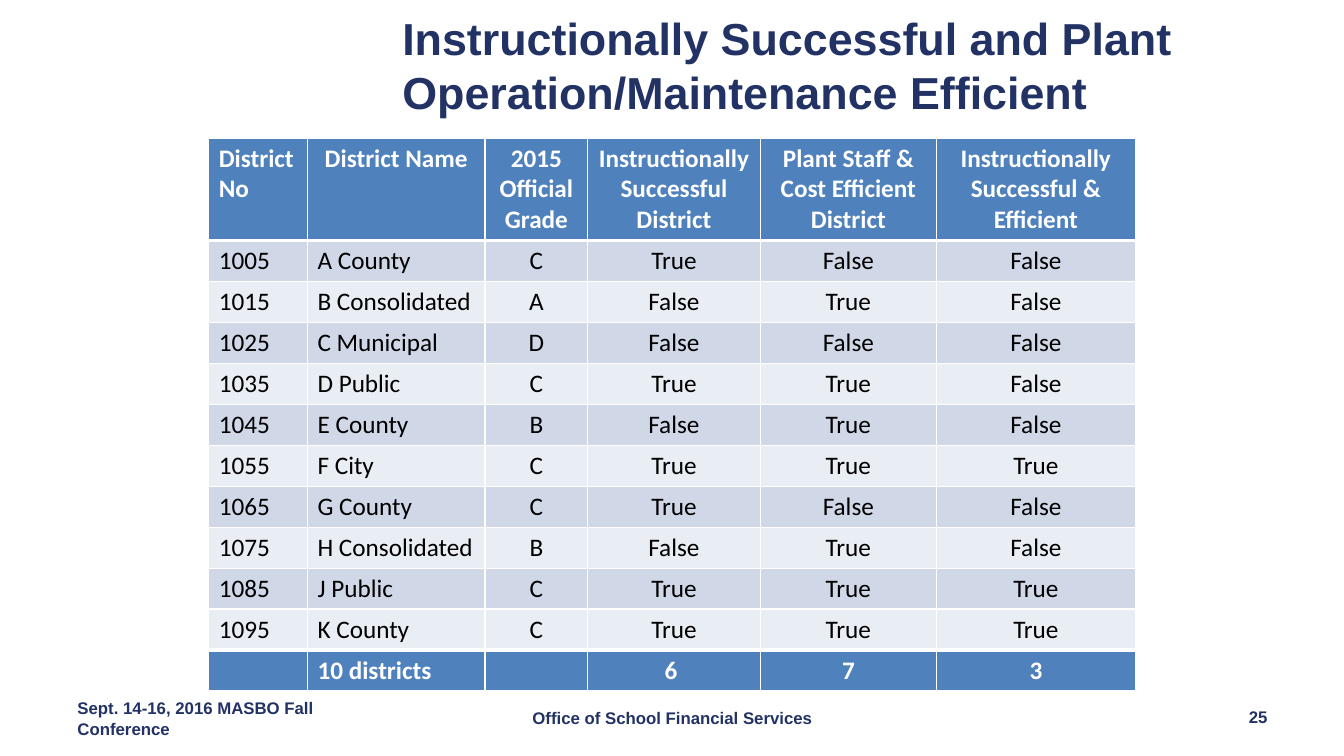
import dataclasses

import lxml.etree
import pptx
import pptx.dml.color
import pptx.enum.text
import pptx.oxml.ns
import pptx.util

Inches = pptx.util.Inches
Align = pptx.enum.text.PP_ALIGN
Anchor = pptx.enum.text.MSO_ANCHOR

NAVY, BLUE, WHITE, BLACK = "223264", "4F81BD", "FFFFFF", "000000"
BANDS = ("D0D8E8", "E9EDF4")

HEADINGS = (
    "District No",
    "District Name",
    "2015 Official Grade",
    "Instructionally Successful District",
    "Plant Staff & Cost Efficient District",
    "Instructionally Successful & Efficient",
)
DISTRICTS = (
    ("1005", "A County", "C", "True", "False", "False"),
    ("1015", "B Consolidated", "A", "False", "True", "False"),
    ("1025", "C Municipal", "D", "False", "False", "False"),
    ("1035", "D Public", "C", "True", "True", "False"),
    ("1045", "E County", "B", "False", "True", "False"),
    ("1055", "F City", "C", "True", "True", "True"),
    ("1065", "G County", "C", "True", "False", "False"),
    ("1075", "H Consolidated", "B", "False", "True", "False"),
    ("1085", "J Public", "C", "True", "True", "True"),
    ("1095", "K County", "C", "True", "True", "True"),
)
TOTALS = ("", "10 districts", "", "6 ", "7", "3")
COLUMN_WIDTHS = (0.98, 1.76, 1.02, 1.71, 1.75, 1.97)
TABLE_LEFT, TABLE_TOP, TABLE_HEIGHT, HEADING_HEIGHT = 2.07, 1.37, 5.47, 1.0


@dataclasses.dataclass(frozen=True)
class TextStyle:
    size: float
    color: str
    name: str = "Arial"
    bold: bool = True


@dataclasses.dataclass(frozen=True)
class FooterItem:
    text: str
    left: float
    top: float
    width: float
    alignment: Align


TITLE_STYLE = TextStyle(32, NAVY)
FOOTER_STYLE = TextStyle(12, NAVY)
HEADING_STYLE = TextStyle(18, WHITE, "Calibri")
DISTRICT_STYLE = TextStyle(18, BLACK, "Calibri", False)
FOOTER = (
    FooterItem("Sept. 14-16, 2016 MASBO Fall Conference", 0.67, 6.85, 3.11, Align.LEFT),
    FooterItem("Office of School Financial Services", 4.56, 6.85, 4.22, Align.CENTER),
    FooterItem("25", 9.56, 6.84, 3.11, Align.RIGHT),
)


def rgb(color: str) -> pptx.dml.color.RGBColor:
    return pptx.dml.color.RGBColor.from_string(color)


def write(frame, text: str, style: TextStyle, alignment: Align) -> None:
    para = frame.paragraphs[0]
    para.alignment = alignment
    span = para.add_run()
    span.text = text
    span.font.color.rgb = rgb(style.color)
    values = {"size": pptx.util.Pt(style.size), "name": style.name, "bold": style.bold}
    for attribute, value in values.items():
        setattr(span.font, attribute, value)


def add_borders(cell, widths: dict[str, float]) -> None:
    """Give the cell white edges; must run before the cell is filled."""
    properties = cell._tc.get_or_add_tcPr()
    for side, width in widths.items():
        line = lxml.etree.SubElement(properties, pptx.oxml.ns.qn(f"a:ln{side}"),
                                     w=str(pptx.util.Pt(width)))
        fill = lxml.etree.SubElement(line, pptx.oxml.ns.qn("a:solidFill"))
        lxml.etree.SubElement(fill, pptx.oxml.ns.qn("a:srgbClr"), val=WHITE)


def add_title(page) -> None:
    title = page.shapes.title
    bounds = {"left": 3.89, "top": 0.06, "width": 7.99, "height": 1.17}
    for attribute, value in bounds.items():
        setattr(title, attribute, Inches(value))
    frame = title.text_frame
    frame.word_wrap = True
    frame.auto_size = pptx.enum.text.MSO_AUTO_SIZE.NONE
    frame.vertical_anchor = Anchor.TOP
    write(frame, "Instructionally Successful and Plant Operation/Maintenance Efficient",
          TITLE_STYLE, Align.LEFT)


def add_district_table(page) -> None:
    rows = (HEADINGS, *DISTRICTS, TOTALS)
    last = len(rows) - 1
    table = page.shapes.add_table(
        len(rows), len(HEADINGS), Inches(TABLE_LEFT), Inches(TABLE_TOP),
        Inches(sum(COLUMN_WIDTHS)), Inches(TABLE_HEIGHT)).table
    for column, width in zip(table.columns, COLUMN_WIDTHS):
        column.width = Inches(width)
    for index, texts in enumerate(rows):
        is_heading, is_total = index == 0, index == last
        is_strong = is_heading or is_total
        table.rows[index].height = Inches(
            HEADING_HEIGHT if is_heading else (TABLE_HEIGHT - HEADING_HEIGHT) / last)
        for position, text in enumerate(texts):
            cell = table.cell(index, position)
            add_borders(cell, {"L": 1, "R": 1,
                               "T": 3 if index in (1, last) else 1,
                               "B": 3 if index in (0, last - 1) else 1})
            cell.fill.solid()
            cell.fill.fore_color.rgb = rgb(BLUE if is_strong else BANDS[(index - 1) % 2])
            is_left = position == 0 or (position == 1 and not is_heading)
            if text:
                write(cell.text_frame, text, HEADING_STYLE if is_strong else DISTRICT_STYLE,
                      Align.LEFT if is_left else Align.CENTER)


def add_footer_item(page, item: FooterItem) -> None:
    box = page.shapes.add_textbox(Inches(item.left), Inches(item.top),
                                  Inches(item.width), Inches(0.55))
    box.text_frame.word_wrap = True
    box.text_frame.vertical_anchor = Anchor.MIDDLE
    write(box.text_frame, item.text, FOOTER_STYLE, item.alignment)


def main() -> None:
    deck = pptx.Presentation()
    deck.slide_width, deck.slide_height = Inches(13.33), Inches(7.5)
    page = deck.slides.add_slide(deck.slide_layouts.get_by_name("Title Only"))
    add_district_table(page)
    add_title(page)
    for item in FOOTER:
        add_footer_item(page, item)
    deck.save("out.pptx")


if __name__ == "__main__":
    main()
